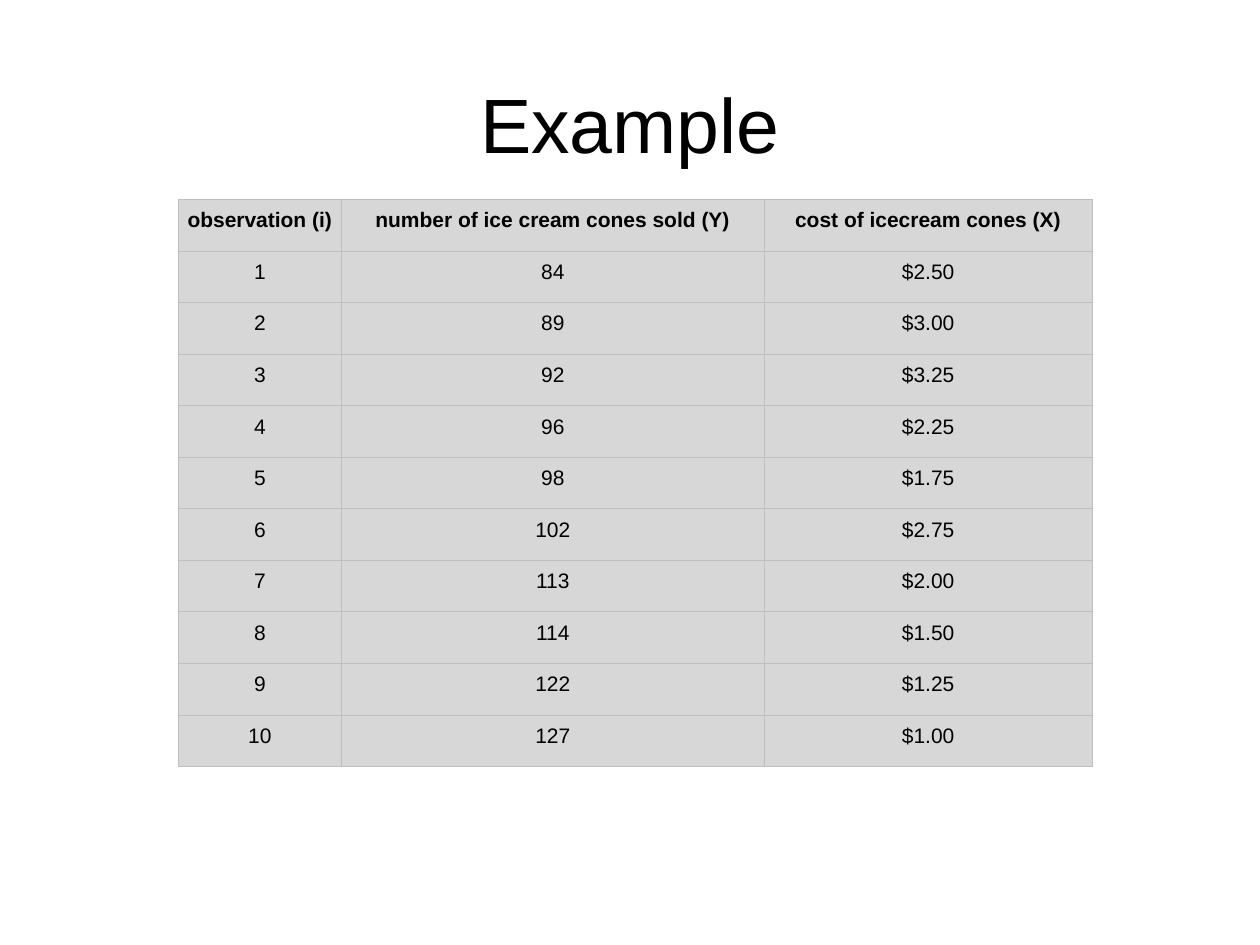
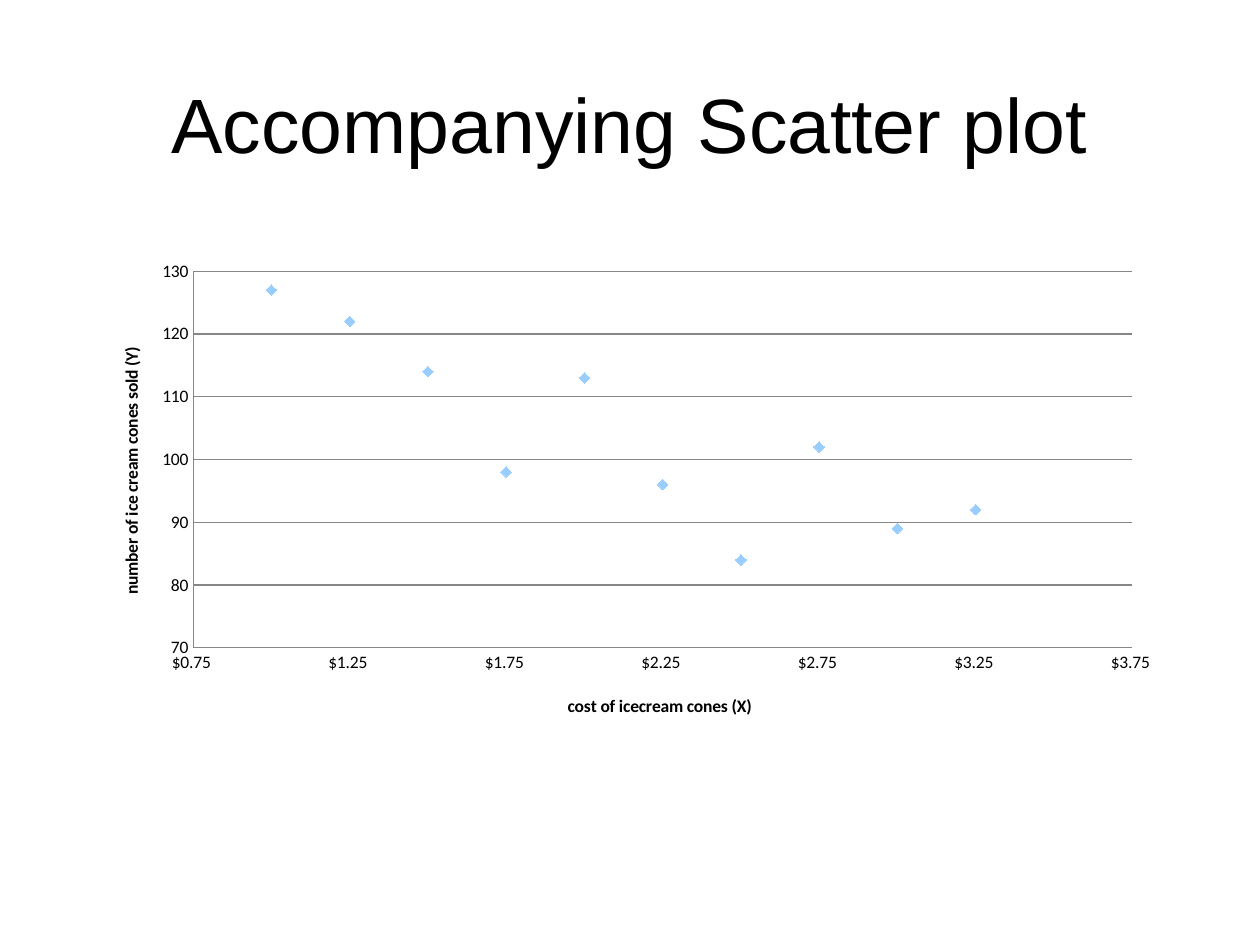
from dataclasses import dataclass

from lxml.etree import SubElement
from pptx import Presentation
from pptx.chart.data import XyChartData
from pptx.dml.color import RGBColor
from pptx.enum.chart import XL_CHART_TYPE as ChartType
from pptx.enum.chart import XL_MARKER_STYLE as Marker
from pptx.enum.chart import XL_TICK_MARK as Tick
from pptx.enum.text import MSO_ANCHOR as Anchor
from pptx.enum.text import PP_ALIGN as Align
from pptx.oxml.ns import qn
from pptx.util import Inches, Pt

COLUMNS, ROWS = 120, 90

OBSERVATION = "observation (i)"
SOLD = "number of ice cream cones sold (Y)"
COST = "cost of icecream cones (X)"
SALES = [
    (84, 2.50), (89, 3.00), (92, 3.25), (96, 2.25), (98, 1.75),
    (102, 2.75), (113, 2.00), (114, 1.50), (122, 1.25), (127, 1.00),
]


@dataclass(frozen=True)
class Theme:
    ink: str = "000000"
    paper: str = "FFFFFF"
    cell: str = "D7D7D7"
    border: str = "BFBFBF"
    axis: str = "868686"
    point: str = "99CCFF"
    body_font: str = "Arial"
    chart_font: str = "Calibri"
    title_size: int = 44
    table_size: int = 12
    chart_size: int = 10
    table_leading: int = 8
    border_width: float = 0.5
    axis_width: float = 0.75
    marker_size: int = 6


def rgb(code):
    return RGBColor.from_string(code)


def format_font(font, size, name, color, bold=False):
    font.size, font.name, font.bold = Pt(size), name, bold
    font.color.rgb = rgb(color)


def write(frame, text, *, size, name, color, bold=False, align=None, leading=None):
    """Put one formatted paragraph into a text frame."""
    paragraph = frame.paragraphs[0]
    paragraph.alignment = align
    if leading:
        paragraph.line_spacing = Pt(leading)
    run = paragraph.add_run()
    run.text = text
    format_font(run.font, size, name, color, bold)


def place(element, index, **shares):
    """Give a chart part a manual layout, in shares of the chart's size."""
    layout = element.find(qn("c:layout"))
    if layout is None:
        layout = element.makeelement(qn("c:layout"))
        element.insert(index, layout)
    for child in list(layout):
        layout.remove(child)
    manual = SubElement(layout, qn("c:manualLayout"))
    if "w" in shares:
        SubElement(manual, qn("c:layoutTarget")).set("val", "inner")
    for side in ("x", "y"):
        SubElement(manual, qn(f"c:{side}Mode")).set("val", "edge")
    for side, share in shares.items():
        SubElement(manual, qn(f"c:{side}")).set("val", str(share))


class Deck:
    """Holds the theme and the current slide; boxes are given in grid units."""

    def __init__(self, theme):
        self.theme = theme
        self.file = Presentation()
        self.file.slide_width, self.file.slide_height = Inches(10), Inches(7.5)
        self.slide = None

    def box(self, column, row, columns, rows):
        across = self.file.slide_width / COLUMNS
        down = self.file.slide_height / ROWS
        return [int(n) for n in (column * across, row * down, columns * across, rows * down)]

    def new_slide(self, heading):
        self.slide = self.file.slides.add_slide(self.file.slide_layouts[6])
        backdrop = self.slide.background.fill
        backdrop.solid()
        backdrop.fore_color.rgb = rgb(self.theme.paper)
        self.title(heading)

    def title(self, heading):
        frame = self.slide.shapes.add_textbox(*self.box(6, 3.6, 108, 15)).text_frame
        frame.word_wrap = True
        frame.vertical_anchor = Anchor.MIDDLE
        frame.margin_top, frame.margin_bottom = Inches(0.1), 0
        write(frame, heading, size=self.theme.title_size, name=self.theme.body_font,
              color=self.theme.ink, align=Align.CENTER)

    def table(self, records, column, row, widths, rows):
        area = self.box(column, row, sum(widths), rows)
        table = self.slide.shapes.add_table(len(records), len(widths), *area).table
        table.first_row = table.horz_banding = False
        for table_column, width in zip(table.columns, widths):
            table_column.width = self.box(0, 0, width, 0)[2]
        for r, record in enumerate(records):
            for c, text in enumerate(record):
                self.cell(table.cell(r, c), text, bold=r == 0)

    def cell(self, cell, text, bold):
        theme = self.theme
        cell.margin_left = cell.margin_right = cell.margin_top = cell.margin_bottom = 0
        cell.vertical_anchor = Anchor.MIDDLE
        write(cell.text_frame, text, size=theme.table_size, name=theme.body_font,
              color=theme.ink, bold=bold, align=Align.CENTER, leading=theme.table_leading)
        properties = cell._tc.get_or_add_tcPr()
        for side in "LRTB":
            edge = SubElement(properties, qn(f"a:ln{side}"), w=str(Pt(theme.border_width)))
            SubElement(SubElement(edge, qn("a:solidFill")), qn("a:srgbClr"), val=theme.border)
        cell.fill.solid()
        cell.fill.fore_color.rgb = rgb(theme.cell)

    def scatter(self, points, area):
        """Draw (x, y) points and return the chart."""
        theme = self.theme
        data = XyChartData()
        series_data = data.add_series("Series 1")
        for x, y in points:
            series_data.add_data_point(x, y)
        chart = self.slide.shapes.add_chart(ChartType.XY_SCATTER, *self.box(*area), data).chart
        chart.has_legend = chart.has_title = False
        format_font(chart.font, theme.chart_size, theme.chart_font, theme.ink)
        plot = chart.plots[0]
        plot.vary_by_categories = False
        series = plot.series[0]
        series.format.line.fill.background()
        series.marker.style, series.marker.size = Marker.DIAMOND, theme.marker_size
        series.marker.format.fill.solid()
        series.marker.format.fill.fore_color.rgb = rgb(theme.point)
        series.marker.format.line.fill.background()
        return chart

    def axis(self, axis, label, scale, number_format, label_at, grid=False):
        theme = self.theme
        axis.minimum_scale, axis.maximum_scale, axis.major_unit = scale
        axis.major_tick_mark = axis.minor_tick_mark = Tick.NONE
        axis.tick_labels.number_format = number_format
        axis.tick_labels.number_format_is_linked = False
        axis.has_major_gridlines = grid
        lines = [axis.format.line] + ([axis.major_gridlines.format.line] if grid else [])
        for line in lines:
            line.color.rgb = rgb(theme.axis)
            line.width = Pt(theme.axis_width)
        write(axis.axis_title.text_frame, label, size=theme.chart_size,
              name=theme.chart_font, color=theme.ink, bold=True)
        x, y = label_at
        place(axis.axis_title._element, 1, x=x, y=y)


def main():
    deck = Deck(Theme())

    deck.new_slide("Example")
    observations = [(str(i), str(sold), f"${cost:.2f}")
                    for i, (sold, cost) in enumerate(SALES, 1)]
    deck.table([(OBSERVATION, SOLD, COST)] + observations,
               column=17, row=19, widths=(15.5, 40.3, 31.2), rows=54)

    deck.new_slide("Accompanying Scatter plot")
    chart = deck.scatter([(cost, sold) for sold, cost in SALES], (8, 24, 104, 46))
    deck.axis(chart.category_axis, COST, (0.75, 3.75, 0.5), r"\$#,##0.00_)", (0.44, 0.91))
    deck.axis(chart.value_axis, SOLD, (70, 130, 10), "General", (0.03, 0.19), grid=True)
    plot_area = chart._chartSpace.chart.plotArea
    place(plot_area, 0, x=0.1, y=0.04, w=0.86, h=0.78)

    deck.file.save("out.pptx")


if __name__ == "__main__":
    main()
